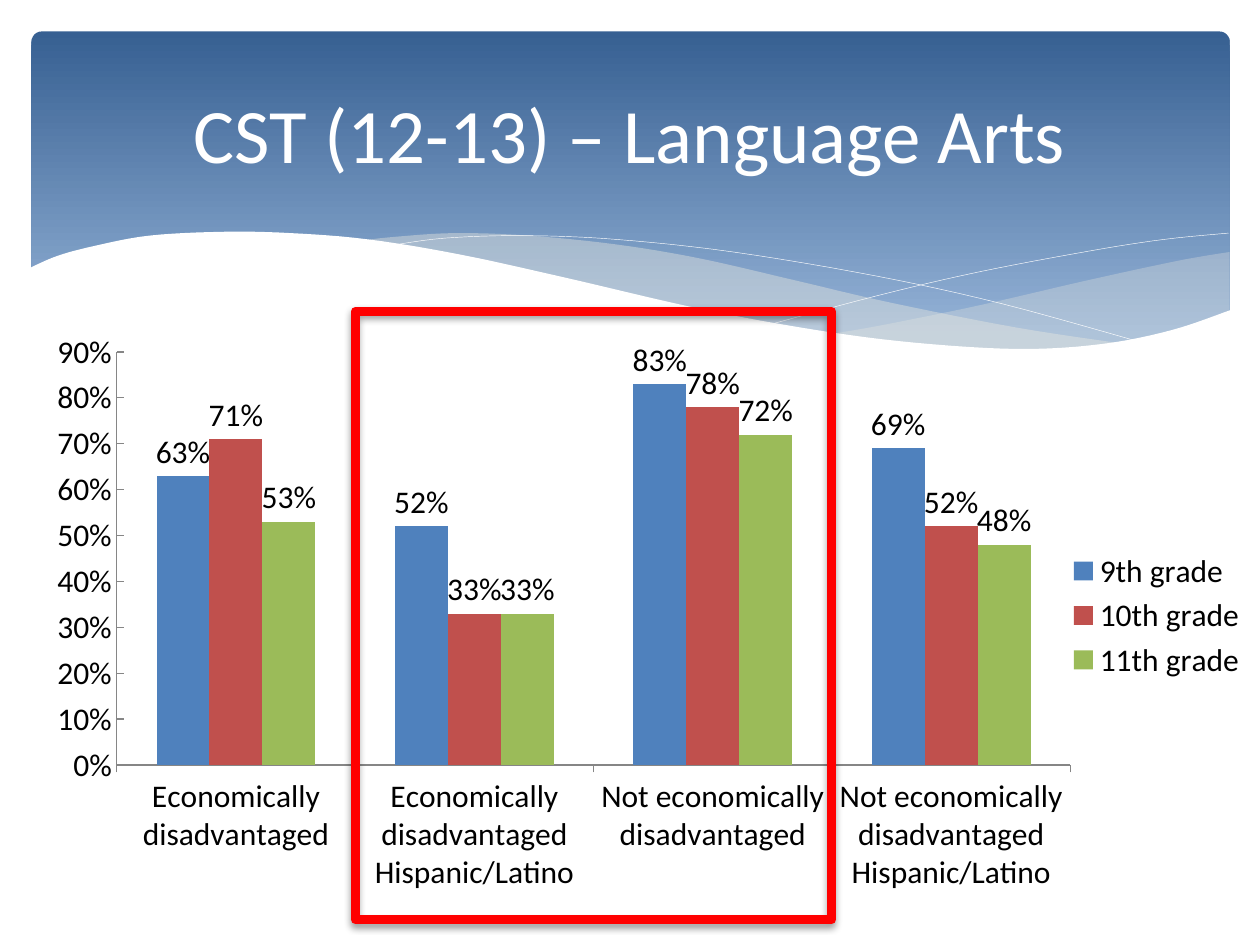
from lxml.etree import SubElement
from pptx import Presentation
from pptx.chart.data import CategoryChartData
from pptx.dml.color import RGBColor
from pptx.enum.chart import XL_CHART_TYPE, XL_LABEL_POSITION, XL_LEGEND_POSITION, XL_TICK_MARK
from pptx.enum.shapes import MSO_SHAPE
from pptx.enum.text import MSO_ANCHOR, PP_ALIGN
from pptx.oxml import parse_xml
from pptx.oxml.ns import nsdecls, qn
from pptx.util import Inches, Pt

# Content
TITLE = "CST (12-13) – Language Arts"
GROUPS = ["Economically disadvantaged", "Economically disadvantaged Hispanic/Latino",
          "Not economically disadvantaged", "Not economically disadvantaged Hispanic/Latino"]
GRADES = [("9th grade", "blue", (0.63, 0.52, 0.83, 0.69)),
          ("10th grade", "red", (0.71, 0.33, 0.78, 0.52)),
          ("11th grade", "green", (0.53, 0.33, 0.72, 0.48))]

COLORS = {"banner_top": "376092", "banner_bottom": "95B3D7", "mist": "EEECE1",
          "white": "FFFFFF", "black": "000000", "axis": "868686", "highlight": "FF0000",
          "blue": "4F81BD", "red": "C0504D", "green": "9BBB59"}
FONT = "Calibri"
PLOT = {"x": 0.077, "y": 0.067, "w": 0.77, "h": 0.679}

# Wave edges as knots in inches; each edge is smoothed, corners lie between edges
RIGHT_MIST = [
    [(9.76, 2), (9.35, 2.07), (8.61, 2.23), (7.79, 2.42), (7.06, 2.57), (6.61, 2.65)],
    [(6.61, 2.65), (7.19, 2.72), (7.69, 2.77), (8.14, 2.78), (8.63, 2.75), (9.13, 2.67),
     (9.49, 2.57), (9.76, 2.47)]]
LONG_MIST = [
    [(8.93, 2.73), (8.07, 2.6), (7.06, 2.4), (6.29, 2.22), (5.55, 2.05), (4.89, 1.94),
     (4.2, 1.87), (3.61, 1.85), (3.13, 1.88), (2.86, 1.91)],
    [(2.86, 1.91), (3.62, 2.03), (4.49, 2.22), (5.66, 2.48), (6.5, 2.64), (7.22, 2.74),
     (7.85, 2.78), (8.38, 2.78), (8.93, 2.73)]]
FALLING_LINE = [[(3.09, 1.95), (3.53, 1.89), (4.16, 1.87), (4.89, 1.9), (5.82, 2),
                 (6.95, 2.19), (7.95, 2.41), (9.07, 2.72)]]
RISING_LINE = [[(6.13, 2.57), (6.95, 2.35), (7.76, 2.16), (8.66, 1.99), (9.24, 1.9),
                (9.75, 1.85)]]
WHITE_WAVE = [
    [(9.77, 2.46), (9.3, 2.62), (8.75, 2.73), (8.09, 2.77), (7.26, 2.72), (6.48, 2.62),
     (5.55, 2.45), (4.47, 2.2), (3.65, 2.02), (2.92, 1.9), (2.3, 1.85), (1.77, 1.84),
     (1.19, 1.87), (0.76, 1.95), (0.46, 2.03), (0.23, 2.13)],
    [(0.23, 3.29), (9.77, 3.29)]]


def rgb(name):
    return RGBColor.from_string(COLORS[name])


def smooth(knots, steps=6):
    """Points along a Catmull-Rom curve through the knots."""
    padded = [knots[0], *knots, knots[-1]]
    points = [knots[0]]
    for a, b, c, d in zip(padded, padded[1:], padded[2:], padded[3:]):
        for step in range(1, steps + 1):
            t = step / steps
            points.append(tuple(
                (2 * q + (r - p) * t + (2 * p - 5 * q + 4 * r - s) * t ** 2
                 + (3 * q - p - 3 * r + s) * t ** 3) / 2
                for p, q, r, s in zip(a, b, c, d)))
    return points


def add_wave(shapes, edges, fill=None, opacity=100):
    points = [(Inches(x), Inches(y)) for edge in edges for x, y in smooth(edge)]
    builder = shapes.build_freeform(*points[0], scale=1.0)
    builder.add_line_segments(points[1:], close=fill is not None)
    wave = builder.convert_to_shape()
    wave.shadow.inherit = False
    if fill is None:
        wave.fill.background()
        wave.line.color.rgb = rgb("white")
        wave.line.width = Pt(0.25)
        return
    wave.fill.solid()
    wave.fill.fore_color.rgb = rgb(fill)
    wave.line.fill.background()
    if opacity < 100:
        color = wave.fill._xPr.find(qn("a:solidFill"))[0]
        SubElement(color, qn("a:alpha"), val=str(opacity * 1000))


def add_banner(shapes):
    banner = shapes.add_shape(MSO_SHAPE.ROUNDED_RECTANGLE, Inches(0.25), Inches(0.25),
                              Inches(9.51), Inches(2.7))
    banner.adjustments[0] = 0.03
    banner.shadow.inherit = False
    banner.line.fill.background()
    banner.fill.gradient()
    banner.fill.gradient_angle = 270
    stops = [("banner_top", 0), ("banner_bottom", 0.9)]
    for stop, (color, position) in zip(banner.fill.gradient_stops, stops):
        stop.color.rgb = rgb(color)
        stop.position = position
    add_wave(shapes, RIGHT_MIST, "mist", 29)
    add_wave(shapes, LONG_MIST, "mist", 40)
    add_wave(shapes, FALLING_LINE)
    add_wave(shapes, RISING_LINE)
    add_wave(shapes, WHITE_WAVE, "white")


def place_title(shapes):
    title = shapes.title
    title.left, title.top = Inches(0.5), Inches(0.37)
    title.width, title.height = Inches(9), Inches(1.37)
    title.text_frame.vertical_anchor = MSO_ANCHOR.MIDDLE
    heading = title.text_frame.paragraphs[0]
    heading.alignment = PP_ALIGN.CENTER
    run = heading.add_run()
    run.text = TITLE
    run.font.size, run.font.name = Pt(44), FONT
    run.font.color.rgb = rgb("white")
    shapes._spTree.append(title._element)  # bring in front of the banner


def add_scores(shapes):
    scores = CategoryChartData(number_format="0%")
    scores.categories = GROUPS
    for grade, _, values in GRADES:
        scores.add_series(grade, values)
    chart = shapes.add_chart(XL_CHART_TYPE.COLUMN_CLUSTERED, Inches(0.17), Inches(2.47),
                             Inches(9.83), Inches(4.83), scores).chart
    chart.has_title = False
    chart.font.size, chart.font.name = Pt(18), FONT
    chart.font.color.rgb = rgb("black")
    chart.has_legend = True
    chart.legend.position = XL_LEGEND_POSITION.RIGHT
    chart.legend.include_in_layout = False

    # Axes
    percent = chart.value_axis
    percent.minimum_scale, percent.maximum_scale, percent.major_unit = 0, 0.9, 0.1
    percent.has_major_gridlines = False
    percent.tick_labels.number_format = "0%"
    percent.tick_labels.number_format_is_linked = False
    percent.major_tick_mark = XL_TICK_MARK.INSIDE
    chart.category_axis.major_tick_mark = XL_TICK_MARK.OUTSIDE
    for axis in (percent, chart.category_axis):
        axis.format.line.color.rgb = rgb("axis")

    # Columns and their labels
    plot = chart.plots[0]
    plot.gap_width, plot.overlap, plot.vary_by_categories = 150, 0, False
    for series, (_, color, _) in zip(plot.series, GRADES):
        series.format.fill.solid()
        series.format.fill.fore_color.rgb = rgb(color)
        labels = series.data_labels
        labels.show_value = True
        labels.number_format, labels.number_format_is_linked = "0%", False
        labels.position = XL_LABEL_POSITION.OUTSIDE_END

    # Fixed inner plot area
    area = chart._chartSpace.find(".//" + qn("c:plotArea"))
    for old in area.findall(qn("c:layout")):
        area.remove(old)
    sides = '<c:layoutTarget val="inner"/><c:xMode val="edge"/><c:yMode val="edge"/>'
    sides += "".join(f'<c:{side} val="{share}"/>' for side, share in PLOT.items())
    area.insert(0, parse_xml(f'<c:layout {nsdecls("c")}><c:manualLayout>{sides}'
                             '</c:manualLayout></c:layout>'))


def add_highlight(shapes):
    frame = shapes.add_shape(MSO_SHAPE.RECTANGLE, Inches(2.82), Inches(2.47),
                             Inches(3.78), Inches(4.83))
    frame.fill.background()
    frame.line.color.rgb = rgb("highlight")
    frame.line.width = Pt(5)
    frame._element.spPr.append(parse_xml(
        f'<a:effectLst {nsdecls("a")}><a:outerShdw blurRad="{Pt(4)}" dist="{Pt(2)}" '
        f'dir="5400000" rotWithShape="0"><a:srgbClr val="{COLORS["black"]}">'
        '<a:alpha val="38000"/></a:srgbClr></a:outerShdw></a:effectLst>'))


def main():
    deck = Presentation()
    deck.slide_width, deck.slide_height = Inches(10), Inches(7.5)
    shapes = deck.slides.add_slide(deck.slide_layouts[5]).shapes
    add_banner(shapes)
    place_title(shapes)
    add_scores(shapes)
    add_highlight(shapes)
    deck.save("out.pptx")


if __name__ == "__main__":
    main()
